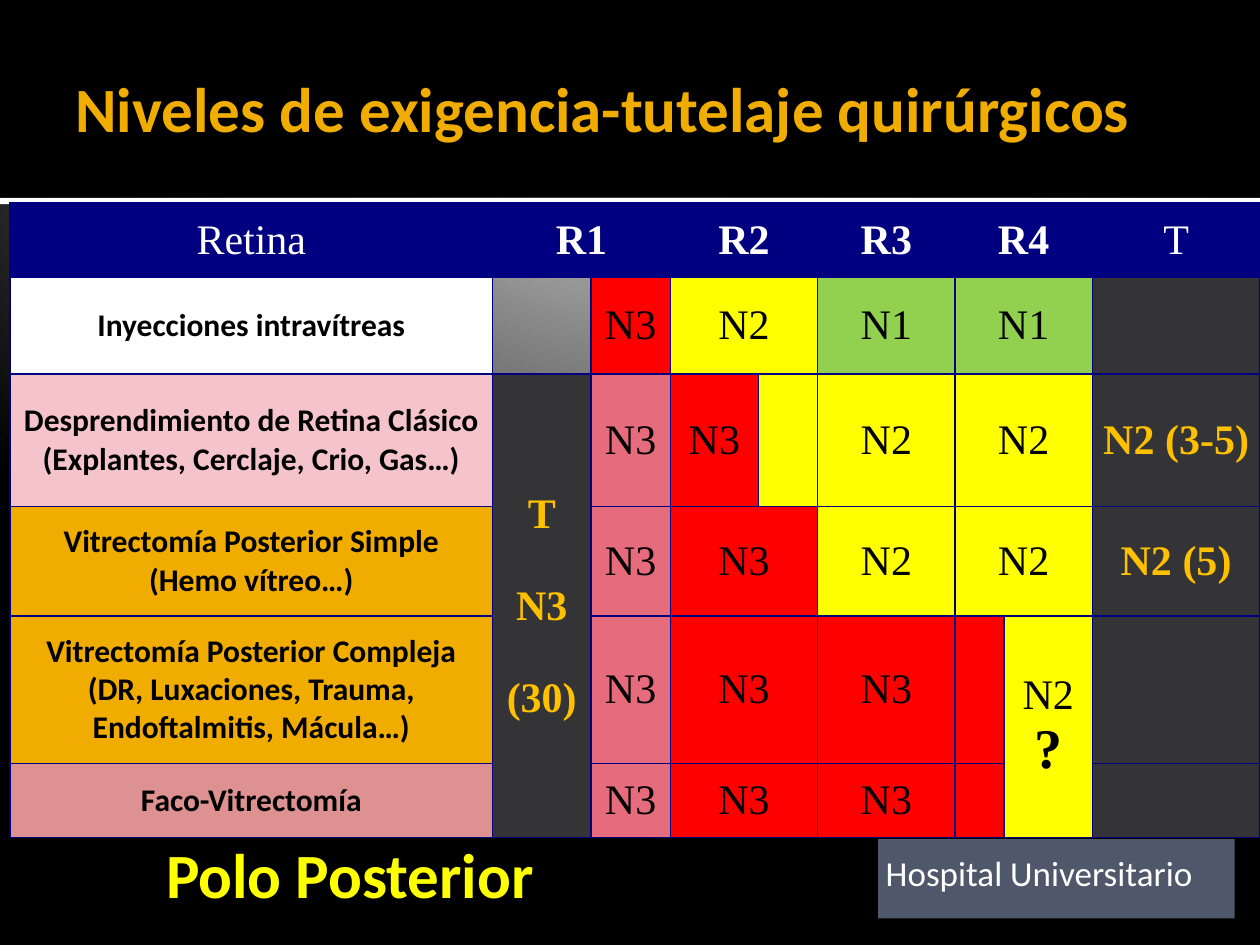
from pptx import Presentation
from pptx.dml.color import RGBColor
from pptx.enum.shapes import MSO_SHAPE
from pptx.enum.text import MSO_ANCHOR, PP_ALIGN
from pptx.oxml import parse_xml
from pptx.oxml.ns import nsdecls
from pptx.util import Inches, Pt

RECTANGLE = MSO_SHAPE.RECTANGLE
MIDDLE = MSO_ANCHOR.MIDDLE
TOP = MSO_ANCHOR.TOP
CENTER = PP_ALIGN.CENTER
LEFT = PP_ALIGN.LEFT

WHITE = RGBColor(0xFF, 0xFF, 0xFF)
BLACK = RGBColor(0x00, 0x00, 0x00)
NAVY = RGBColor(0x00, 0x00, 0x80)
RED = RGBColor(0xFF, 0x00, 0x00)
YELLOW = RGBColor(0xFF, 0xFF, 0x00)
GREEN = RGBColor(0x92, 0xD0, 0x50)
ROSE = RGBColor(0xE6, 0x6C, 0x7D)
PINK = RGBColor(0xF5, 0xC4, 0xCB)
SALMON = RGBColor(0xDD, 0x91, 0x91)
AMBER = RGBColor(0xF0, 0xAD, 0x00)
GOLD = RGBColor(0xFF, 0xC0, 0x00)
CHARCOAL = RGBColor(0x34, 0x34, 0x37)
SLATE = RGBColor(0x4F, 0x57, 0x6A)

SANS = "Calibri"
SERIF = "Times New Roman"


def write_text(frame, text, size=24, font=SERIF, color=BLACK, bold=False,
               align=CENTER, gap=0):
    for index, line in enumerate(text.split("\n")):
        paragraph = frame.add_paragraph() if index else frame.paragraphs[0]
        paragraph.alignment = align
        paragraph.space_before = Pt(gap if index else 0)
        run = paragraph.add_run()
        run.text = line
        run.font.size = Pt(size)
        run.font.name = font
        run.font.bold = bold
        run.font.color.rgb = color


presentation = Presentation()
presentation.slide_width = Inches(10)
presentation.slide_height = Inches(7.5)
slide = presentation.slides.add_slide(presentation.slide_layouts[6])

stops = "".join(
    f'<a:gs pos="{position * 1000}"><a:srgbClr val="{color}"/></a:gs>'
    for position, color in [(0, "C0C0C0"), (12, "C0C0C0"), (20, "BEBEBE"), (100, "000000")]
)
background = parse_xml(
    f'<p:bg {nsdecls("p", "a")}><p:bgPr><a:gradFill rotWithShape="1"><a:gsLst>{stops}</a:gsLst>'
    '<a:path path="circle"><a:fillToRect l="10000" t="-25000" r="10000" b="125000"/></a:path>'
    '</a:gradFill><a:effectLst/></p:bgPr></p:bg>'
)
slide.element.cSld.insert(0, background)

for top, height, color in [(1.57, 0.05, WHITE), (0, 1.57, BLACK)]:
    band = slide.shapes.add_shape(RECTANGLE, 0, Inches(top), Inches(10), Inches(height))
    band.shadow.inherit = False
    band.fill.solid()
    band.fill.fore_color.rgb = color
    band.line.fill.background()

title = slide.shapes.add_textbox(Inches(0.5), Inches(0.17), Inches(9), Inches(1.37))
title.text_frame.word_wrap = True
title.text_frame.vertical_anchor = MIDDLE
write_text(title.text_frame, "Niveles de exigencia-tutelaje quirúrgicos",
           size=36, font=SANS, color=AMBER, bold=True, align=LEFT)

subtitle = slide.shapes.add_textbox(Inches(1.22), Inches(6.58), Inches(4.17), Inches(0.71))
subtitle.text_frame.word_wrap = True
write_text(subtitle.text_frame, "Polo Posterior",
           size=36, font=SANS, color=YELLOW, bold=True, align=LEFT)

hospital = slide.shapes.add_shape(RECTANGLE, Inches(6.97), Inches(6.66), Inches(2.83), Inches(0.63))
hospital.shadow.inherit = False
hospital.fill.solid()
hospital.fill.fore_color.rgb = SLATE
hospital.line.fill.background()
hospital.text_frame.margin_left = Inches(0.06)
hospital.text_frame.margin_top = Inches(0.1)
hospital.text_frame.vertical_anchor = TOP
write_text(hospital.text_frame, "Hospital Universitario", size=20, font=SANS, color=WHITE, align=LEFT)

column_widths = [3.83, 0.78, 0.63, 0.7, 0.47, 1.09, 0.39, 0.7, 1.33]
row_heights = [0.59, 0.77, 1.05, 0.87, 1.17, 0.59]
table = slide.shapes.add_table(len(row_heights), len(column_widths), Inches(0.08), Inches(1.61),
                               Inches(sum(column_widths)), Inches(sum(row_heights))).table
for column, width in zip(table.columns, column_widths):
    column.width = Inches(width)
for row, height in zip(table.rows, row_heights):
    row.height = Inches(height)

plain_header = dict(color=WHITE)
bold_header = dict(color=WHITE, bold=True)
label = dict(size=18, font=SANS, bold=True)
tutor = dict(color=GOLD, bold=True)
tutor_stack = dict(color=GOLD, bold=True, gap=26)

levels = [
    [(0, 1, "Retina", NAVY, plain_header), (1, 2, "R1", NAVY, bold_header),
     (3, 2, "R2", NAVY, bold_header), (5, 1, "R3", NAVY, bold_header),
     (6, 2, "R4", NAVY, bold_header), (8, 1, "T", NAVY, plain_header)],
    [(0, 1, "Inyecciones intravítreas", WHITE, label), (1, 1, "", None, {}),
     (2, 1, "N3", RED, {}), (3, 2, "N2", YELLOW, {}), (5, 1, "N1", GREEN, {}),
     (6, 2, "N1", GREEN, {}), (8, 1, "", CHARCOAL, {})],
    [(0, 1, "Desprendimiento de Retina Clásico (Explantes, Cerclaje, Crio, Gas…)", PINK, label),
     (1, 1, "T\nN3\n(30)", CHARCOAL, tutor_stack), (2, 1, "N3", ROSE, {}),
     (3, 1, "N3", RED, {}), (4, 1, "", YELLOW, {}), (5, 1, "N2", YELLOW, {}),
     (6, 2, "N2", YELLOW, {}), (8, 1, "N2 (3-5)", CHARCOAL, tutor)],
    [(0, 1, "Vitrectomía Posterior Simple (Hemo vítreo…)", AMBER, label),
     (2, 1, "N3", ROSE, {}), (3, 2, "N3", RED, {}), (5, 1, "N2", YELLOW, {}),
     (6, 2, "N2", YELLOW, {}), (8, 1, "N2 (5)", CHARCOAL, tutor)],
    [(0, 1, "Vitrectomía Posterior Compleja (DR, Luxaciones, Trauma, Endoftalmitis, Mácula…)",
      AMBER, label),
     (2, 1, "N3", ROSE, {}), (3, 2, "N3", RED, {}), (5, 1, "N3", RED, {}),
     (6, 1, "", RED, {}), (7, 1, "N2\n?", YELLOW, {}), (8, 1, "", CHARCOAL, {})],
    [(0, 1, "Faco-Vitrectomía", SALMON, label), (2, 1, "N3", ROSE, {}),
     (3, 2, "N3", RED, {}), (5, 1, "N3", RED, {}), (6, 1, "", RED, {}),
     (8, 1, "", CHARCOAL, {})],
]
row_spans = {(2, 1): 4, (4, 7): 2}

for row_index, entries in enumerate(levels):
    for column_index, column_span, text, fill, text_format in entries:
        cell = table.cell(row_index, column_index)
        row_span = row_spans.get((row_index, column_index), 1)
        if row_span * column_span > 1:
            cell.merge(table.cell(row_index + row_span - 1, column_index + column_span - 1))
        if fill is None:
            cell.fill.background()
        else:
            cell.fill.solid()
            cell.fill.fore_color.rgb = fill
        if text:
            write_text(cell.text_frame, text, **text_format)

question_mark = table.cell(4, 7).text_frame.paragraphs[1].runs[0]
question_mark.font.size = Pt(32)
question_mark.font.bold = True

for cell in table.iter_cells():
    cell.vertical_anchor = MIDDLE
    cell.margin_left = cell.margin_right = Inches(0.07)
    cell.margin_top = cell.margin_bottom = 0
    properties = cell._tc.get_or_add_tcPr()
    for position, side in enumerate(["lnL", "lnR", "lnT", "lnB"]):
        properties.insert(position, parse_xml(
            f'<a:{side} {nsdecls("a")} w="{Pt(1)}"><a:solidFill>'
            f'<a:srgbClr val="{NAVY}"/></a:solidFill></a:{side}>'))

presentation.save("out.pptx")
